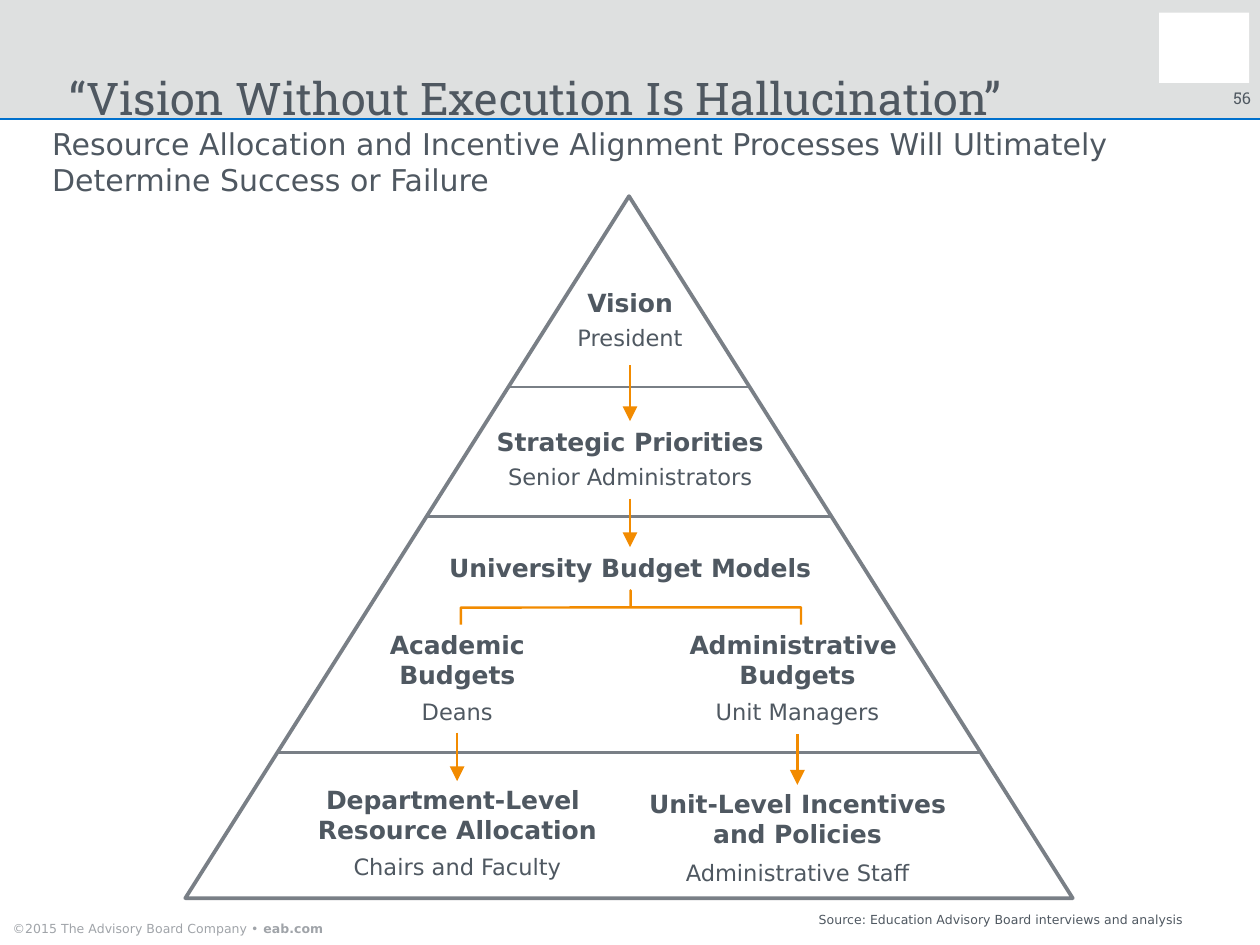
import lxml.etree
import pptx
import pptx.util
import pptx.dml.color
import pptx.enum.shapes
import pptx.enum.text
import pptx.oxml.ns

Inches, Pt = pptx.util.Inches, pptx.util.Pt
SHAPE = pptx.enum.shapes.MSO_SHAPE
ALIGN = pptx.enum.text.PP_ALIGN
ANCHOR = pptx.enum.text.MSO_ANCHOR
qn = pptx.oxml.ns.qn

SANS, SLAB = "DejaVu Sans", "Roboto Slab"
TEXT, BAND, BLUE, WHITE = "4F5861", "DEE0E0", "0070CD", "FFFFFF"
OUTLINE, ORANGE, FOOTER = "797F86", "F28B00", "A0A4A9"

TITLE = "“Vision Without Execution Is Hallucination”"
SUBTITLE = ("Resource Allocation and Incentive Alignment Processes "
            "Will Ultimately Determine Success or Failure")
COPYRIGHT = [("©2015 The Advisory Board Company • ", False), ("eab.com", True)]
SOURCE = "Source: Education Advisory Board interviews and analysis"
PAGE = "56"

# Text, centre, top, width
HEADINGS = [
    ("Vision", 3.5, 1.6, 0.85),
    ("Strategic Priorities", 3.5, 2.37, 1.56),
    ("University Budget Models", 3.5, 3.07, 2.51),
    ("Academic Budgets", 2.54, 3.5, 1.29),
    ("Administrative \nBudgets", 4.43, 3.5, 1.29),
    ("Department-Level \nResource Allocation", 2.54, 4.36, 1.84),
    ("Unit-Level Incentives and Policies", 4.43, 4.38, 1.79),
]
ROLES = [
    ("President", 3.5, 1.8, 1.13),
    ("Senior Administrators", 3.5, 2.57, 1.49),
    ("Deans", 2.54, 3.88, 0.7),
    ("Unit Managers", 4.43, 3.88, 0.96),
    ("Chairs and Faculty", 2.54, 4.74, 1.4),
    ("Administrative Staff", 4.43, 4.77, 1.49),
]
# Centre, from, to
ARROWS = [(3.5, 2.03, 2.34), (3.5, 2.77, 3.04), (2.54, 4.07, 4.34), (4.43, 4.08, 4.36)]
PYRAMID = (1.03, 1.09, 4.93, 3.9)
LEVELS = [2.15, 2.87, 4.18]

deck = pptx.Presentation()
deck.slide_width, deck.slide_height = Inches(7), Inches(5.25)
slide = deck.slides.add_slide(deck.slide_layouts[6])


def rgb(value):
    return pptx.dml.color.RGBColor.from_string(value)


def write(shape, content, size=9, font=SANS, color=TEXT, bold=False, align=ALIGN.LEFT,
          anchor=ANCHOR.TOP, margins=(0, 0, 0, 0)):
    """Fill a shape with text; content is a string or a list of (text, bold) runs."""
    frame = shape.text_frame
    frame.word_wrap = True
    frame.vertical_anchor = anchor
    (frame.margin_left, frame.margin_top,
     frame.margin_right, frame.margin_bottom) = map(Inches, margins)
    paragraph = frame.paragraphs[0]
    paragraph.alignment = align
    runs = [(content, bold)] if isinstance(content, str) else content
    for words, heavy in runs:
        for index, line in enumerate(words.split("\n")):
            if index:
                paragraph.add_line_break()
            run = paragraph.add_run()
            run.text = line
            run.font.size, run.font.name, run.font.bold = Pt(size), font, heavy
            run.font.color.rgb = rgb(color)


def text(content, left, top, width, height, **style):
    box = slide.shapes.add_textbox(*map(Inches, (left, top, width, height)))
    write(box, content, **style)


def shape(kind, left, top, width, height, fill=None, line=None, weight=1):
    item = slide.shapes.add_shape(kind, *map(Inches, (left, top, width, height)))
    item.shadow.inherit = False
    if fill:
        item.fill.solid()
        item.fill.fore_color.rgb = rgb(fill)
    else:
        item.fill.background()
    if line:
        item.line.color.rgb = rgb(line)
        item.line.width = Pt(weight)
    else:
        item.line.fill.background()
    return item


def connect(x1, y1, x2, y2, color, weight=1, arrow=False):
    link = slide.shapes.add_connector(pptx.enum.shapes.MSO_CONNECTOR.STRAIGHT,
                                      *map(Inches, (x1, y1, x2, y2)))
    link.line.color.rgb = rgb(color)
    link.line.width = Pt(weight)
    properties = link._element.find(qn("p:spPr"))
    if arrow:
        lxml.etree.SubElement(properties.find(qn("a:ln")), qn("a:tailEnd"), type="triangle")
    lxml.etree.SubElement(properties, qn("a:effectLst"))


# Header and footer
shape(SHAPE.RECTANGLE, 0, 0, 7, 0.66, fill=BAND)
connect(0, 0.66, 7, 0.66, BLUE, 0.75)
shape(SHAPE.RECTANGLE, 6.44, 0.07, 0.5, 0.39, fill=WHITE)
page_tab = shape(SHAPE.RECTANGLE, 6.74, 0.49, 0.26, 0.11, fill=BAND)
write(page_tab, PAGE, size=6.5, font=SLAB, align=ALIGN.RIGHT, anchor=ANCHOR.MIDDLE,
      margins=(0, 0, 0.05, 0))
text(TITLE, 0.29, 0.34, 6, 0.28, size=18, font=SLAB, margins=(0.1, 0.05, 0.1, 0.05))
text(SUBTITLE, 0.29, 0.7, 6.4, 0.4, size=12)
text(COPYRIGHT, 0, 5.12, 2.31, 0.13, size=5, color=FOOTER, anchor=ANCHOR.BOTTOM,
     margins=(0.07, 0, 0, 0.05))
text(SOURCE, 4.45, 5.02, 2.55, 0.21, size=5, margins=(0.1, 0.05, 0.1, 0.05))

# Pyramid, with level lines running from side to side
left, top, width, height = PYRAMID
shape(SHAPE.ISOSCELES_TRIANGLE, *PYRAMID, line=OUTLINE, weight=1.5)
for level in LEVELS:
    half = (level - top) / height * width / 2
    middle = left + width / 2
    connect(middle - half, level, middle + half, level, OUTLINE)

for x, start, end in ARROWS:
    connect(x, start, x, end, ORANGE, arrow=True)

split = shape(SHAPE.LEFT_BRACE, 3.41, 2.43, 0.19, 1.89, line=ORANGE)
split.adjustments[0], split.adjustments[1] = 0, 0.501
split.rotation = 90

for labels, size, bold in ((HEADINGS, 10, True), (ROLES, 9, False)):
    for label, center, y, span in labels:
        lines = 2 if bold and y >= 3.5 else 1
        text(label, center - span / 2, y, span, lines * size / 60, size=size, bold=bold,
             align=ALIGN.CENTER)

deck.save("out.pptx")
